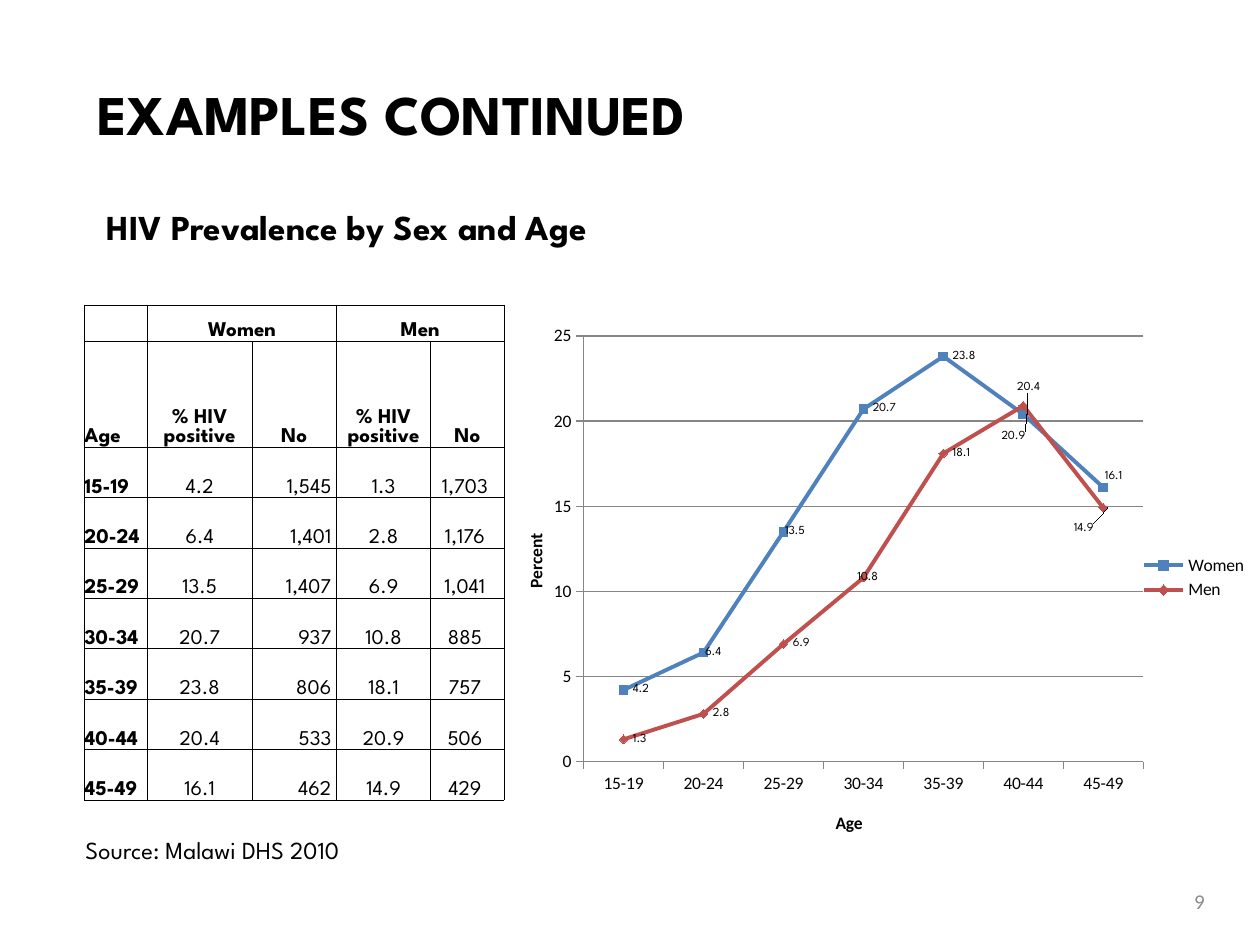
"""Build a slide with a table and a line chart of HIV prevalence by sex and age."""
from lxml import etree
from pptx import Presentation
from pptx.chart.data import CategoryChartData
from pptx.dml.color import RGBColor
from pptx.enum.chart import XL_CHART_TYPE, XL_LABEL_POSITION, XL_LEGEND_POSITION, XL_MARKER_STYLE
from pptx.enum.text import MSO_ANCHOR, PP_ALIGN
from pptx.oxml import parse_xml
from pptx.oxml.ns import qn
from pptx.util import Inches, Pt

LEFT, CENTER, RIGHT = PP_ALIGN.LEFT, PP_ALIGN.CENTER, PP_ALIGN.RIGHT
TOP, MIDDLE, BOTTOM = MSO_ANCHOR.TOP, MSO_ANCHOR.MIDDLE, MSO_ANCHOR.BOTTOM
LABEL_RIGHT = XL_LABEL_POSITION.RIGHT

HEADING_FONT, CHART_FONT = "League Spartan", "Calibri"
BLACK, GRAY, GRID = "000000", "8C8C8C", "868686"

TITLE = "EXAMPLES CONTINUED"
SUBTITLE = "HIV Prevalence by Sex and Age"
SOURCE = "Source: Malawi DHS 2010"
PAGE_NUMBER = "9"

AGES = ["15-19", "20-24", "25-29", "30-34", "35-39", "40-44", "45-49"]
GROUPS = [
    {"name": "Women", "color": "4F81BD", "marker": XL_MARKER_STYLE.SQUARE,
     "percent": [4.2, 6.4, 13.5, 20.7, 23.8, 20.4, 16.1],
     "count": [1545, 1401, 1407, 937, 806, 533, 462],
     "label_shifts": {1: (-0.01, 0), 2: (-0.01, 0), 5: (-0.02, -0.05), 6: (-0.01, -0.02)}},
    {"name": "Men", "color": "C0504D", "marker": XL_MARKER_STYLE.DIAMOND,
     "percent": [1.3, 2.8, 6.9, 10.8, 18.1, 20.9, 14.9],
     "count": [1703, 1176, 1041, 885, 757, 506, 429],
     "label_shifts": {3: (-0.02, 0), 5: (-0.04, 0.06), 6: (-0.05, 0.04)}},
]
COLUMN_WIDTHS = [0.5, 0.83, 0.67, 0.75, 0.58]
ROW_HEIGHTS = [0.29, 0.84] + [0.4] * len(AGES)
COLUMN_ALIGNMENTS = [LEFT, CENTER, RIGHT, CENTER, CENTER]
RIGHT_MARGINS = [0, 0, 0.04, 0, 0.04]


def color(value):
    return RGBColor.from_string(value)


def style_font(font, size, name=HEADING_FONT, fill=BLACK, bold=False):
    font.size, font.name, font.bold = Pt(size), name, bold
    font.color.rgb = color(fill)


def write(frame, text, size, align=LEFT, anchor=TOP, **style):
    frame.vertical_anchor = anchor
    para = frame.paragraphs[0]
    para.text, para.alignment = text, align
    style_font(para.font, size, **style)


def add_text(page, area, text, size, wrap=True, **style):
    box = page.shapes.add_textbox(*map(Inches, area))
    box.text_frame.word_wrap = wrap
    write(box.text_frame, text, size, **style)


def add_borders(cell):
    properties = cell._tc.get_or_add_tcPr()
    for side in ("lnL", "lnR", "lnT", "lnB"):
        line = etree.SubElement(properties, qn(f"a:{side}"), w=str(Pt(0.5)))
        fill = etree.SubElement(line, qn("a:solidFill"))
        etree.SubElement(fill, qn("a:srgbClr"), val=BLACK)


def add_prevalence_table(page):
    rows = [["", GROUPS[0]["name"], "", GROUPS[1]["name"], ""],
            ["Age"] + ["% HIV positive", "No"] * len(GROUPS)]
    for index, age in enumerate(AGES):
        row = [age]
        for group in GROUPS:
            row += [f"{group['percent'][index]:.1f}", f"{group['count'][index]:,}"]
        rows.append(row)
    frame = page.shapes.add_table(len(rows), len(COLUMN_WIDTHS), Inches(0.67), Inches(2.42),
                                  Inches(sum(COLUMN_WIDTHS)), Inches(sum(ROW_HEIGHTS)))
    table = frame.table
    for column, width in zip(table.columns, COLUMN_WIDTHS):
        column.width = Inches(width)
    for r, (row, height) in enumerate(zip(rows, ROW_HEIGHTS)):
        table.rows[r].height = Inches(height)
        for c, text in enumerate(row):
            cell, header = table.cell(r, c), r < 2
            cell.margin_left = cell.margin_top = cell.margin_bottom = 0
            cell.margin_right = 0 if header else Inches(RIGHT_MARGINS[c])
            align = CENTER if header and c else COLUMN_ALIGNMENTS[c]
            write(cell.text_frame, text, 12, align, bold=header or c == 0)
            cell.vertical_anchor = BOTTOM
            add_borders(cell)
            cell.fill.background()
    for c in (1, 3):
        table.cell(0, c).merge(table.cell(0, c + 1))


def set_layout(element, position, **values):
    for old in element.findall(qn("c:layout")):
        element.remove(old)
    layout = parse_xml('<c:layout xmlns:c="http://schemas.openxmlformats.org/drawingml/2006/chart"/>')
    manual = etree.SubElement(layout, qn("c:manualLayout"))
    for name, value in values.items():
        etree.SubElement(manual, qn(f"c:{name}"), val=str(value))
    element.insert(position, layout)


def style_axis(axis, title, x, y):
    axis.format.line.color.rgb = color(GRID)
    write_title = axis.axis_title.text_frame
    write_title.text = title
    style_font(write_title.paragraphs[0].font, 10, CHART_FONT, bold=True)
    set_layout(axis.axis_title.element, 1, xMode="edge", yMode="edge", x=x, y=y)


def style_series(chart, order, series, group):
    series.smooth = False
    series.format.line.color.rgb = color(group["color"])
    series.format.line.width = Pt(2.25)
    marker = series.marker
    marker.style, marker.size = group["marker"], 5
    marker.format.fill.solid()
    marker.format.fill.fore_color.rgb = color(group["color"])
    marker.format.line.color.rgb = color(group["color"])
    labels = series.data_labels
    labels.show_value, labels.position = True, LABEL_RIGHT
    style_font(labels.font, 7)
    for index, (x, y) in group["label_shifts"].items():
        label = series.points[index].data_label
        style_font(label.font, 7)
        label.position = LABEL_RIGHT
        element = chart.element.xpath(f".//c:ser[c:idx/@val={order}]//c:dLbl[c:idx/@val={index}]")[0]
        set_layout(element, 1, x=x, y=y)


def add_prevalence_chart(page):
    data = CategoryChartData()
    data.categories = AGES
    for group in GROUPS:
        data.add_series(group["name"], group["percent"])
    area = map(Inches, (3.83, 2.5, 6.17, 4.17))
    chart = page.shapes.add_chart(XL_CHART_TYPE.LINE_MARKERS, *area, data).chart
    style_font(chart.font, 10, CHART_FONT)
    chart.has_title = False
    chart.has_legend = True
    chart.legend.position = XL_LEGEND_POSITION.RIGHT
    chart.legend.include_in_layout = False
    style_axis(chart.category_axis, "Age", 0.45, 0.94)
    style_axis(chart.value_axis, "Percent", 0.05, 0.41)
    chart.value_axis.minimum_scale, chart.value_axis.maximum_scale = 0, 25
    chart.value_axis.major_unit = 5
    chart.value_axis.major_gridlines.format.line.color.rgb = color(GRID)
    chart.plots[0].vary_by_categories = False
    for order, (series, group) in enumerate(zip(chart.plots[0].series, GROUPS)):
        style_series(chart, order, series, group)
    set_layout(chart.element.xpath(".//c:plotArea")[0], 0, layoutTarget="inner", xMode="edge",
               yMode="edge", x=0.13, y=0.04, w=0.72, h=0.81)


def main():
    deck = Presentation()
    deck.slide_width, deck.slide_height = Inches(10), Inches(7.5)
    page = deck.slides.add_slide(deck.slide_layouts[5])
    title = page.shapes.title
    title.left, title.top, title.width, title.height = map(Inches, (0.67, 0.58, 8.33, 0.67))
    write(title.text_frame, TITLE, 32, bold=True)
    add_text(page, (0.75, 1.58, 4.55, 0.44), SUBTITLE, 20, wrap=False, bold=True)
    add_prevalence_chart(page)
    add_prevalence_table(page)
    add_text(page, (0.58, 6.58, 2.75, 0.34), SOURCE, 14)
    add_text(page, (7.33, 6.95, 2.33, 0.4), PAGE_NUMBER, 12, align=RIGHT, anchor=MIDDLE,
             name=CHART_FONT, fill=GRAY)
    deck.save("out.pptx")


if __name__ == "__main__":
    main()
